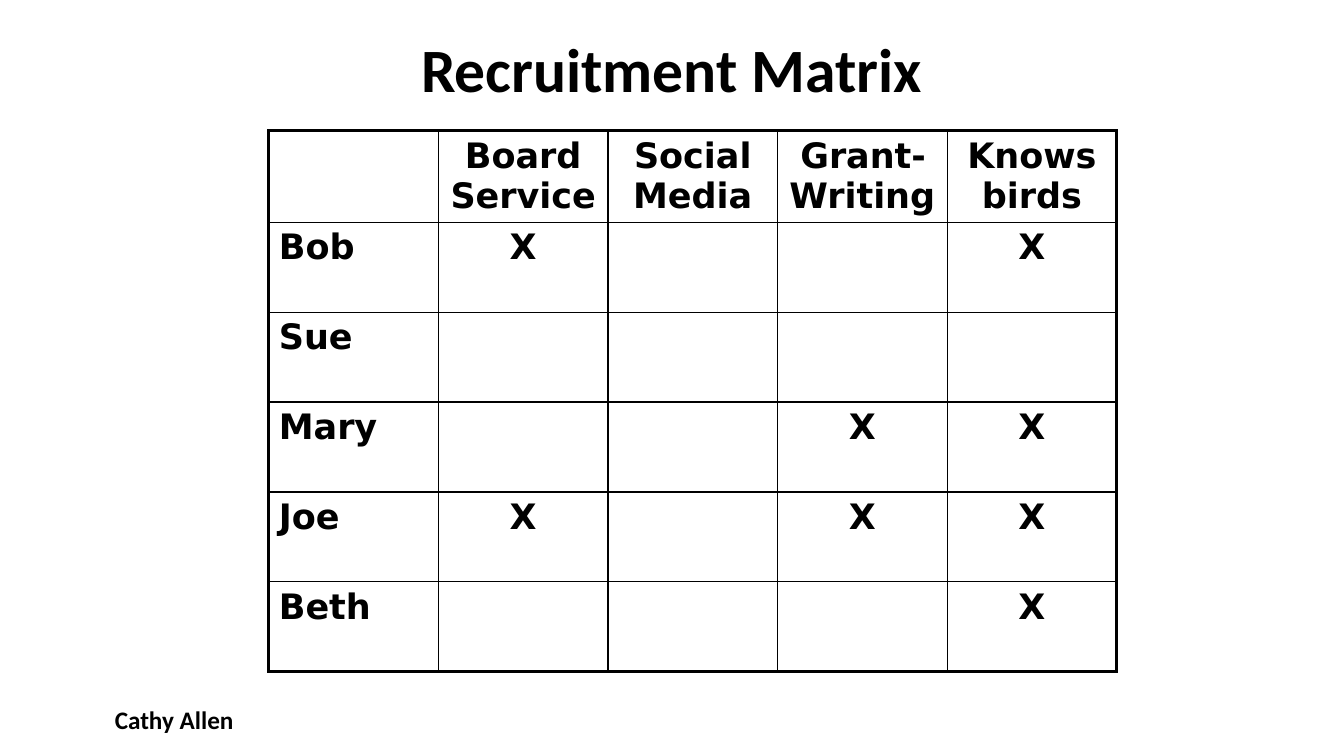
import pptx
import pptx.util
import pptx.dml.color
import pptx.enum.text
import pptx.oxml
import pptx.oxml.ns

WIDE, HIGH = pptx.util.Inches(13.33), pptx.util.Inches(7.5)
COLORS = {"ink": "000000", "page": "FFFFFF"}
ALIGN = pptx.enum.text.PP_ALIGN
ANCHOR = pptx.enum.text.MSO_ANCHOR

SKILLS = ["Board Service", "Social Media", "Grant-Writing", "Knows birds"]
PEOPLE = {
    "Bob": ["Board Service", "Knows birds"],
    "Sue": [],
    "Mary": ["Grant-Writing", "Knows birds"],
    "Joe": ["Board Service", "Grant-Writing", "Knows birds"],
    "Beth": ["Knows birds"],
}


def area(left, top, width, height):
    """Turn shares of the slide into lengths."""
    return int(left * WIDE), int(top * HIGH), int(width * WIDE), int(height * HIGH)


def write(frame, text, size=18, font="Calibri", align=ALIGN.LEFT, space=None):
    para = frame.paragraphs[0]
    para.alignment = align
    para.line_spacing = space
    para.font.size = pptx.util.Pt(size)
    if not text:
        return
    run = para.add_run()
    run.text = text
    run.font.name = font
    run.font.size = pptx.util.Pt(size)
    run.font.bold = True
    run.font.color.rgb = pptx.dml.color.RGBColor.from_string(COLORS["ink"])


def edge(cell, side, width):
    line = pptx.oxml.parse_xml(
        f'<a:{side} {pptx.oxml.ns.nsdecls("a")} w="{pptx.util.Pt(width)}">'
        f'<a:solidFill><a:srgbClr val="{COLORS["ink"]}"/></a:solidFill></a:{side}>')
    cell._tc.get_or_add_tcPr().append(line)


def add_title(slide, text):
    title = slide.shapes.title
    title.left, title.top, title.width, title.height = area(0.2, 0.013, 0.6, 0.167)
    title.text_frame.vertical_anchor = ANCHOR.MIDDLE
    write(title.text_frame, text, size=44, align=ALIGN.CENTER, space=0.9)


def add_matrix(slide):
    rows = [[""] + SKILLS]
    rows += [[name] + ["X" if skill in known else "" for skill in SKILLS]
             for name, known in PEOPLE.items()]
    tall, wide = len(rows), len(rows[0])
    place = area(0.2, 0.173, 0.631, 0.714)
    table = slide.shapes.add_table(tall, wide, *place).table
    table.first_row = table.horz_banding = False
    for r, row in enumerate(rows):
        for c, text in enumerate(row):
            cell = table.cell(r, c)
            write(cell.text_frame, text, size=25, font="DejaVu Sans",
                  align=ALIGN.CENTER if c else ALIGN.LEFT)
            # Thick lines on the outside, thin ones within
            outer = {"lnL": c == 0, "lnR": c == wide - 1,
                     "lnT": r == 0, "lnB": r == tall - 1}
            for side, thick in outer.items():
                edge(cell, side, 2.25 if thick else 1)
            cell.fill.solid()
            cell.fill.fore_color.rgb = pptx.dml.color.RGBColor.from_string(COLORS["page"])


def add_credit(slide, text):
    box = slide.shapes.add_textbox(*area(0.078, 0.925, 0.105, 0.053))
    box.text_frame.word_wrap = False
    write(box.text_frame, text)


def main():
    deck = pptx.Presentation()
    deck.slide_width, deck.slide_height = WIDE, HIGH
    slide = deck.slides.add_slide(deck.slide_layouts[5])  # title only
    add_title(slide, "Recruitment Matrix")
    add_matrix(slide)
    add_credit(slide, "Cathy Allen")
    deck.save("out.pptx")


if __name__ == "__main__":
    main()
